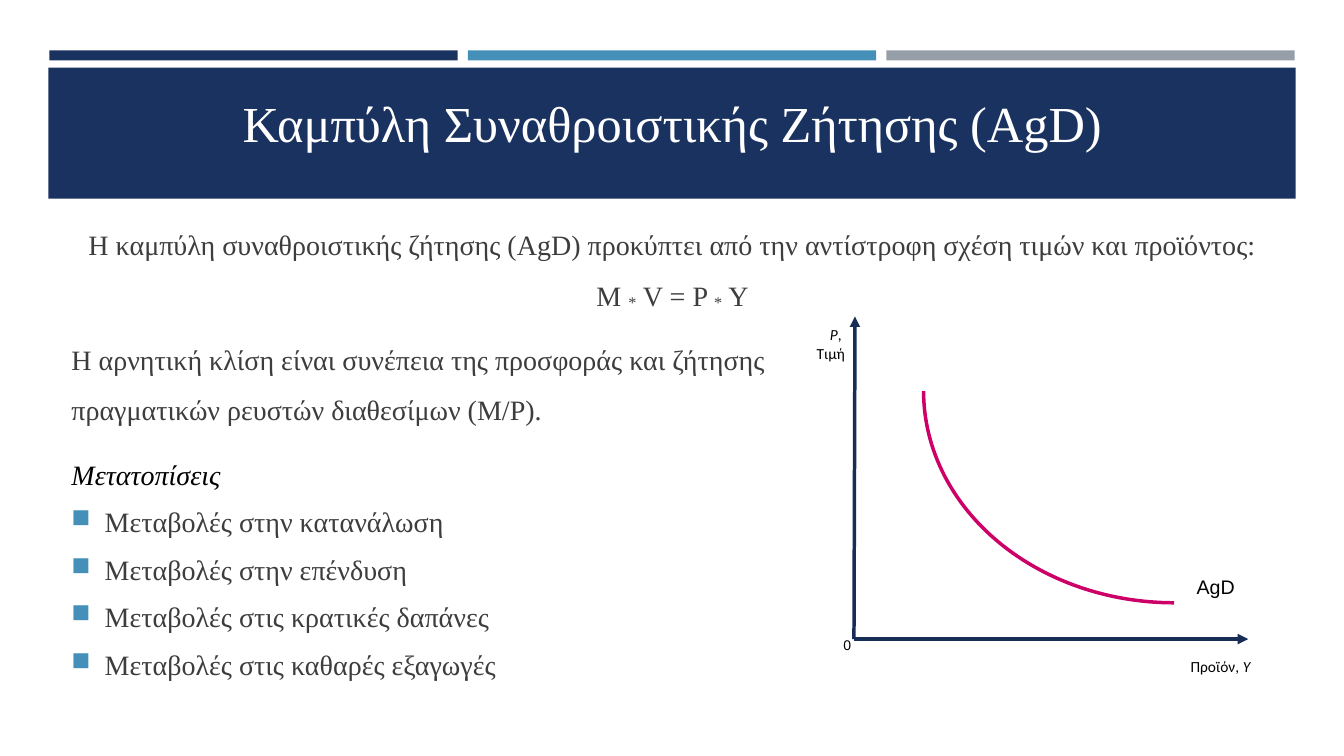
import pptx
import pptx.util
import pptx.dml.color
import pptx.enum.shapes
import pptx.enum.text
import pptx.oxml
import pptx.oxml.ns

Inches, Pt = pptx.util.Inches, pptx.util.Pt
Shape = pptx.enum.shapes.MSO_SHAPE
Align = pptx.enum.text.PP_ALIGN
Anchor = pptx.enum.text.MSO_ANCHOR
NAVY, BLUE, GREY, TEXT, BLACK = "1A3260", "4590B8", "969FA7", "3D3D3D", "000000"
AXIS, CURVE, WHITE = "172D56", "CC0066", "FFFFFF"
SERIF = "Times New Roman"


def paint(color_format, value):
    """Colour a fill, a line or a font from a hex string."""
    if hasattr(color_format, "solid"):
        color_format.solid()
        color_format = color_format.fore_color
    else:
        color_format = color_format.color
    color_format.rgb = pptx.dml.color.RGBColor.from_string(value)


def add_text(box, paragraphs, size, font, color, align=Align.LEFT, anchor=Anchor.TOP):
    """Add a text box; each paragraph is a list of (text, style) runs."""
    frame = slide.shapes.add_textbox(*map(Inches, box)).text_frame
    frame.word_wrap = True
    frame.vertical_anchor = anchor
    for index, runs in enumerate(paragraphs):
        paragraph = frame.paragraphs[0] if index == 0 else frame.add_paragraph()
        paragraph.alignment = align
        for text, style in runs:
            run = paragraph.add_run()
            run.text = text
            run.font.size, run.font.name = Pt(size), font
            run.font.italic = style == "italic"
            paint(run.font, color)
            if style == "lowered":
                run.font._element.set("baseline", "-10000")
    return frame.paragraphs


presentation = pptx.Presentation()
presentation.slide_width, presentation.slide_height = Inches(13.33), Inches(7.5)
slide = presentation.slides.add_slide(presentation.slide_layouts[6])

# Three stripes above the title band
left, stripe, gap = 0.49, 4.05, 0.1
bands = [(left + column * (stripe + gap), 0.5, stripe, 0.1, color)
         for column, color in enumerate((NAVY, BLUE, GREY))]
bands.append((0.48, 0.67, 12.37, 1.3, NAVY))
for *box, color in bands:
    band = slide.shapes.add_shape(Shape.RECTANGLE, *map(Inches, box))
    band.shadow.inherit = False
    paint(band.fill, color)
    band.line.fill.background()

# Title and introduction
add_text((0.64, 0.69, 12.06, 0.87), [[("Καμπύλη Συναθροιστικής Ζήτησης (AgD)", "")]],
         36, SERIF, WHITE, Align.CENTER, Anchor.BOTTOM)
introduction = add_text((0.64, 2.04, 12.06, 1.19), [[
    ("Η καμπύλη συναθροιστικής ζήτησης (AgD) προκύπτει από την αντίστροφη σχέση "
     "τιμών και προϊόντος: M ", ""),
    ("*", "lowered"), (" V = P ", ""), ("*", "lowered"), (" Y", "")]],
    20, SERIF, TEXT, Align.CENTER)

# Explanation and list of shifts
shifts = ["Μεταβολές στην κατανάλωση", "Μεταβολές στην επένδυση",
          "Μεταβολές στις κρατικές δαπάνες", "Μεταβολές στις καθαρές εξαγωγές"]
explanation = add_text((0.61, 3.18, 7.12, 3.83), [
    [("Η αρνητική κλίση είναι συνέπεια της προσφοράς και ζήτησης "
      "πραγματικών ρευστών διαθεσίμων (M/P).", "")],
    [("Μετατοπίσεις", "italic")],
    *[[(shift, "")] for shift in shifts]], 20, SERIF, TEXT)
paint(explanation[1].runs[0].font, BLACK)
for paragraph in introduction + explanation:
    paragraph.space_before, paragraph.space_after = Pt(4), Pt(6)
for paragraph in introduction + explanation[:2]:
    paragraph.line_spacing = 1.5
for paragraph in explanation[2:]:
    properties = paragraph._p.get_or_add_pPr()
    properties.set("marL", str(Inches(0.33)))
    properties.set("indent", str(-Inches(0.33)))
    namespace = pptx.oxml.ns.nsdecls("a")
    for bullet in (f'<a:buClr {namespace}><a:srgbClr val="{BLUE}"/></a:buClr>',
                   f'<a:buSzPct {namespace} val="92000"/>',
                   f'<a:buChar {namespace} char="■"/>'):
        properties.append(pptx.oxml.parse_xml(bullet))

# Chart axes, each from the origin to its arrow tip
origin = (8.47, 6.34)
for tip in ((8.48, 3.14), (12.38, 6.34)):
    axis = slide.shapes.add_connector(pptx.enum.shapes.MSO_CONNECTOR.STRAIGHT,
                                      *map(Inches, origin + tip))
    paint(axis.line.fill, AXIS)
    axis.line.width = Pt(2.5)
    line = axis.line._get_or_add_ln()
    line.append(line.makeelement(pptx.oxml.ns.qn("a:tailEnd"), {"type": "triangle"}))
    axis_properties = axis._element.spPr
    axis_properties.append(axis_properties.makeelement(pptx.oxml.ns.qn("a:effectLst"), {}))

# Demand curve: the lower left quarter of an ellipse
curve = slide.shapes.add_shape(Shape.ARC, *map(Inches, (9.16, 1.78, 4.97, 4.2)))
curve.rotation = 180
curve.shadow.inherit = False
curve.fill.background()
paint(curve.line.fill, CURVE)
curve.line.width = Pt(2.5)

# Chart labels
add_text((11.77, 5.65, 0.96, 0.34), [[("AgD", "")]], 14, "Arial", BLACK)
add_text((6.83, 3.18, 1.65, 0.45), [[("P", "italic"), (", ", "")], [("Τιμή", "")]],
         11, "Calibri", BLACK, Align.RIGHT)
add_text((11.5, 6.47, 1, 0.29), [[("Προϊόν, ", ""), ("Y", "italic")]],
         11, "Calibri", BLACK, Align.RIGHT)
add_text((8.18, 6.27, 0.36, 0.27), [[("0", "")]], 10, "Arial", BLACK, Align.RIGHT)

presentation.save("out.pptx")
